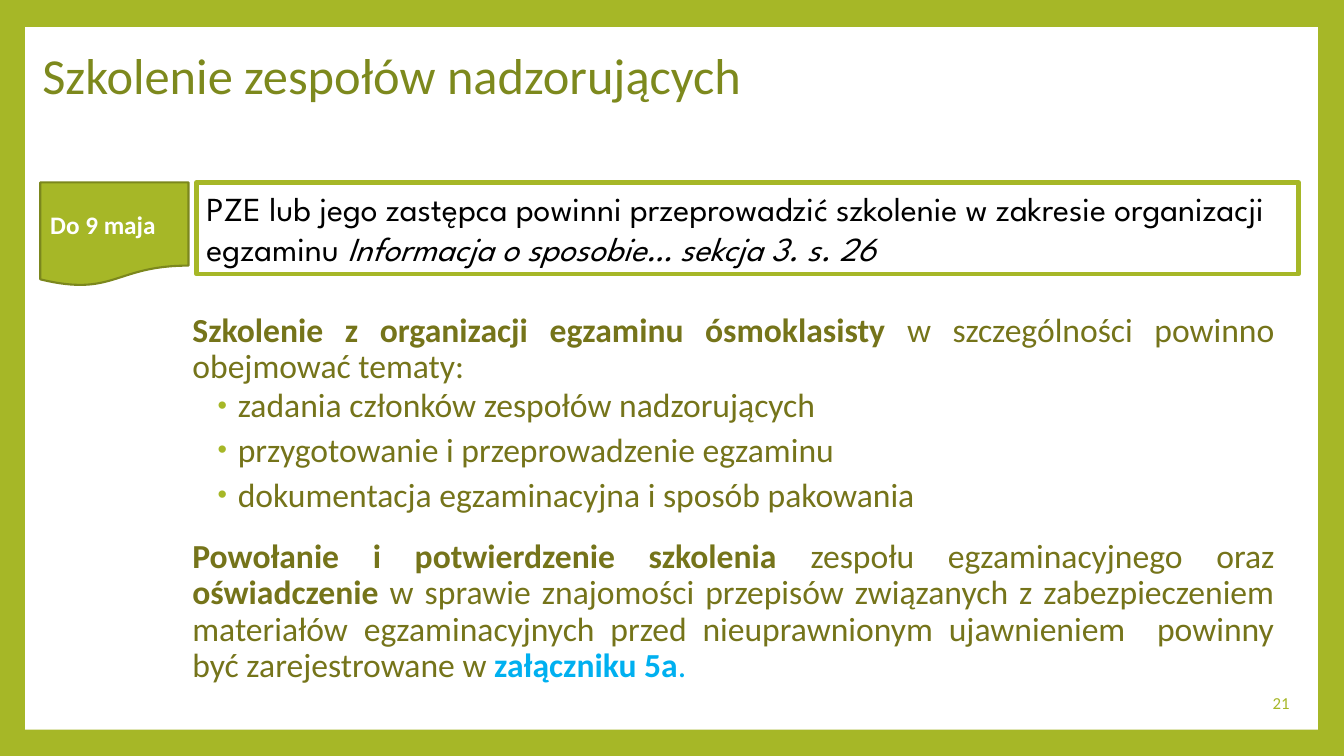
import pptx
import pptx.dml.color
import pptx.enum.shapes
import pptx.enum.text
import pptx.oxml.ns
import pptx.util
from lxml import etree
from pptx.util import Inches, Pt

ALIGN = pptx.enum.text.PP_ALIGN
MIDDLE = pptx.enum.text.MSO_ANCHOR.MIDDLE
SHAPES = pptx.enum.shapes.MSO_SHAPE
LIME, OLIVE, WHITE = "A6B727", "75741A", "FFFFFF"


def color(hex_text):
    return pptx.dml.color.RGBColor.from_string(hex_text)


def set_all(target, values):
    for name, value in values.items():
        setattr(target, name, value)


class TrainingSlide:
    def __init__(self, deck, background):
        self.page = deck.slides.add_slide(deck.slide_layouts[5])
        self.page.background.fill.solid()
        self.page.background.fill.fore_color.rgb = color(background)

    def title(self, text, place, style):
        """Format the title placeholder and bring it in front of earlier shapes."""
        title = self.page.shapes.title
        title._element.getparent().append(title._element)
        set_all(title, dict(zip(("left", "top", "width", "height"), map(Inches, place))))
        set_all(title.text_frame, {"word_wrap": True, "vertical_anchor": MIDDLE})
        self.paragraph(title.text_frame.paragraphs[0], [(text, {})], style,
                       {"alignment": ALIGN.LEFT, "line_spacing": 0.9})

    def shape(self, kind, place, fill=None, line=None, line_width=0):
        shape = self.page.shapes.add_shape(kind, *map(Inches, place))
        shape.shadow.inherit = False
        if fill:
            shape.fill.solid()
            shape.fill.fore_color.rgb = color(fill)
        else:
            shape.fill.background()
        if line:
            shape.line.color.rgb = color(line)
            shape.line.width = Pt(line_width)
        else:
            shape.line.fill.background()
        set_all(shape.text_frame, {"word_wrap": True, "vertical_anchor": MIDDLE})
        return shape

    def text_box(self, place, anchor=pptx.enum.text.MSO_ANCHOR.TOP):
        box = self.page.shapes.add_textbox(*map(Inches, place))
        set_all(box.text_frame, {"word_wrap": True, "vertical_anchor": anchor})
        return box

    def paragraph(self, para, spans, style, layout, margin=0, indent=0, bullet=None):
        """Fill a paragraph with (text, format) spans that share a base style."""
        set_all(para, layout)
        properties = para._p.get_or_add_pPr()
        properties.set("marL", str(Inches(margin)))
        properties.set("indent", str(Inches(indent)))
        if bullet:
            self.bullet(properties, bullet)
        for text, changes in spans:
            span = para.add_run()
            span.text = text
            values = {**style, **changes}
            span.font.color.rgb = color(values.pop("color"))
            set_all(span.font, values)

    def bullet(self, properties, bullet_color):
        qn = pptx.oxml.ns.qn
        bullet_fill = etree.SubElement(properties, qn("a:buClr"))
        etree.SubElement(bullet_fill, qn("a:srgbClr")).set("val", bullet_color)
        etree.SubElement(properties, qn("a:buSzPct")).set("val", "80000")
        etree.SubElement(properties, qn("a:buFont")).set("typeface", "Arial")
        etree.SubElement(properties, qn("a:buChar")).set("char", "•")


def main():
    deck = pptx.Presentation()
    set_all(deck, {"slide_width": Inches(13.33), "slide_height": Inches(7.5)})
    slide = TrainingSlide(deck, LIME)
    body = {"name": "Calibri", "size": Pt(24), "color": OLIVE}
    bold = {"bold": True}
    left = {"alignment": ALIGN.LEFT}

    slide.shape(SHAPES.RECTANGLE, (0.25, 0.27, 12.82, 6.97), fill=WHITE)
    slide.title("Szkolenie zespołów nadzorujących", (0.32, 0.08, 10.22, 1.4),
                {**body, "size": Pt(36), "color": "7D891D"})

    intro = [("Szkolenie z organizacji egzaminu ósmoklasisty ", bold),
             ("w szczególności powinno obejmować tematy:", {})]
    topics = ["zadania członków zespołów nadzorujących",
              "przygotowanie i przeprowadzenie egzaminu",
              "dokumentacja egzaminacyjna i sposób pakowania"]
    closing = [
        ("Powołanie i potwierdzenie szkolenia ", bold),
        ("zespołu egzaminacyjnego oraz ", {}),
        ("oświadczenie", bold),
        (" w sprawie znajomości przepisów związanych z zabezpieczeniem materiałów "
         "egzaminacyjnych przed nieuprawnionym ujawnieniem  powinny być "
         "zarejestrowane w ", {}),
        ("załączniku 5a", {"bold": True, "color": "00B0F0"}),
        (".", {"color": "00B0F0"}),
    ]
    frame = slide.text_box((1.76, 3.06, 10.98, 3.88)).text_frame
    justified = {"alignment": ALIGN.JUSTIFY, "line_spacing": 0.9}
    slide.paragraph(frame.paragraphs[0], intro, body, justified, margin=0.05)
    for topic in topics:
        slide.paragraph(frame.add_paragraph(), [(topic, {})], body,
                        {**justified, "level": 1, "space_before": Pt(2), "space_after": Pt(4)},
                        margin=0.5, indent=-0.2, bullet=LIME)
    slide.paragraph(frame.add_paragraph(), closing, body,
                    {**justified, "space_before": Pt(14)}, margin=0.05)

    number = slide.text_box((11.02, 6.77, 1.87, 0.4), MIDDLE)
    slide.paragraph(number.text_frame.paragraphs[0], [("21", {})],
                    {**body, "size": Pt(12), "color": LIME}, {"alignment": ALIGN.RIGHT})

    notice = slide.shape(SHAPES.RECTANGLE, (1.95, 1.81, 10.93, 0.91), line=LIME, line_width=3)
    slide.paragraph(notice.text_frame.paragraphs[0],
                    [("PZE lub jego zastępca powinni przeprowadzić szkolenie w zakresie "
                      "organizacji egzaminu ", {}),
                     ("Informacja o sposobie… sekcja 3. s. 26", {"italic": True})],
                    {**body, "name": "League Spartan", "color": "000000"}, left)

    deadline = slide.shape(SHAPES.FLOWCHART_DOCUMENT, (0.4, 1.81, 1.47, 1.03),
                           fill=LIME, line="7B871D", line_width=1.5)
    slide.paragraph(deadline.text_frame.paragraphs[0], [("Do 9 maja", bold)],
                    {**body, "size": Pt(18), "color": WHITE}, left)

    deck.save("out.pptx")


if __name__ == "__main__":
    main()
